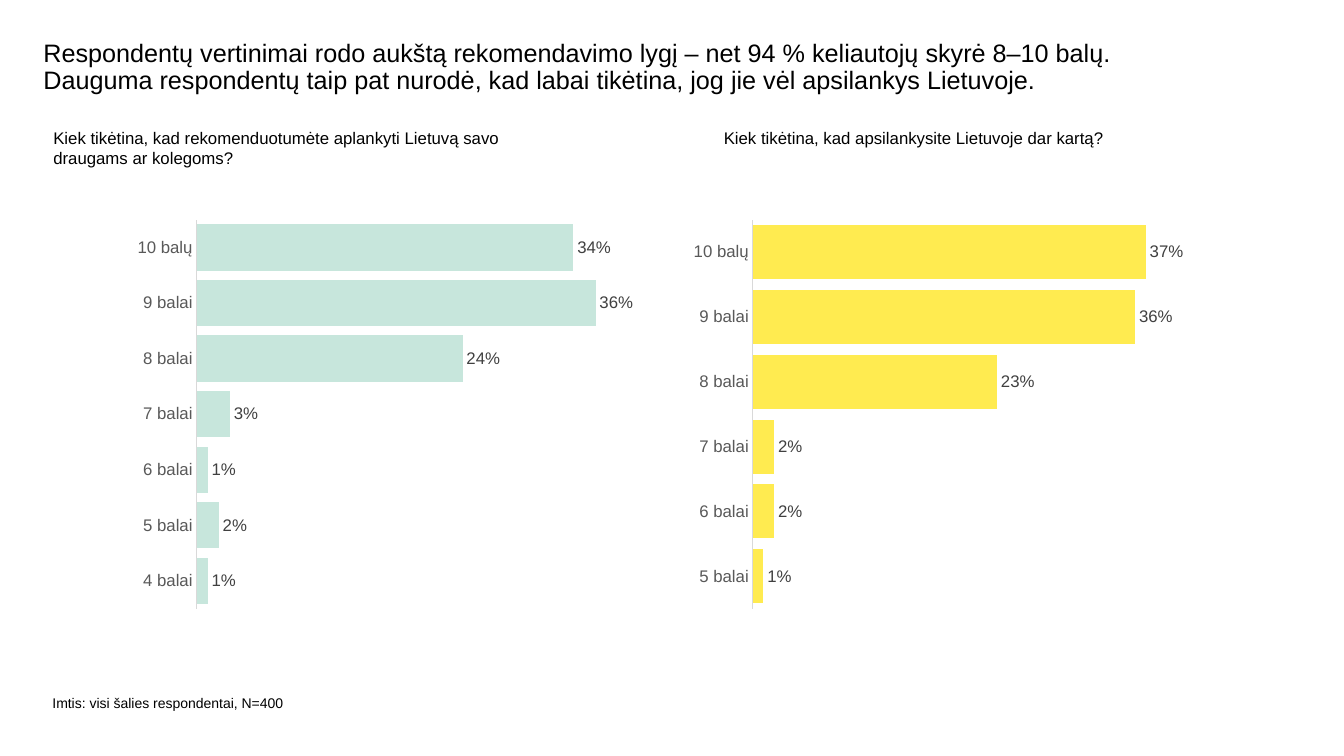
from pptx import Presentation
from pptx.chart.data import CategoryChartData
from pptx.dml.color import RGBColor
from pptx.enum import chart as charts, text
from pptx.util import Inches, Pt

BLACK = RGBColor(0x00, 0x00, 0x00)
AXIS_TEXT = RGBColor(0x59, 0x59, 0x59)
LABEL_TEXT = RGBColor(0x40, 0x40, 0x40)
AXIS_LINE = RGBColor(0xD9, 0xD9, 0xD9)
MINT = RGBColor(0xC7, 0xE6, 0xDC)
YELLOW = RGBColor(0xFF, 0xEB, 0x50)


def style_font(font, size, color):
    font.name, font.size, font.color.rgb = "Arial", Pt(size), color


deck = Presentation()
deck.slide_width, deck.slide_height = Inches(13.33), Inches(7.5)
page = deck.slides.add_slide(deck.slide_layouts[6])

NO_MARGINS = {f"margin_{side}": 0 for side in ("left", "top", "right", "bottom")}
GROW = {"auto_size": text.MSO_AUTO_SIZE.SHAPE_TO_FIT_TEXT}

# Title, sample note and the two questions
texts = [
    ("Respondentų vertinimai rodo aukštą rekomendavimo lygį – net 94 % keliautojų "
     "skyrė 8–10 balų. Dauguma respondentų taip pat nurodė, kad labai tikėtina, "
     "jog jie vėl apsilankys Lietuvoje.", (0.43, 0.4, 11.25, 0.6), 18, 0.9, NO_MARGINS),
    ("Imtis: visi šalies respondentai, N=400", (0.52, 6.89, 3.86, 0.44), 10, 1, NO_MARGINS),
    ("Kiek tikėtina, kad rekomenduotumėte aplankyti Lietuvą savo draugams ar kolegoms?",
     (0.43, 1.22, 5.19, 0.5), 12, 1, GROW),
    ("Kiek tikėtina, kad apsilankysite Lietuvoje dar kartą?",
     (7.08, 1.22, 6.25, 0.3), 12, 1, GROW),
]
for wording, place, size, spacing, frame_format in texts:
    frame = page.shapes.add_textbox(*map(Inches, place)).text_frame
    frame.word_wrap = True
    for name, value in frame_format.items():
        setattr(frame, name, value)
    para = frame.paragraphs[0]
    para.line_spacing = spacing
    span = para.add_run()
    span.text = wording
    style_font(span.font, size, BLACK)

# Score distribution charts
scores = ["10 balų"] + [f"{score} balai" for score in range(9, 3, -1)]
score_charts = [
    (1.26, 5.19, MINT, [0.34, 0.36, 0.24, 0.03, 0.01, 0.02, 0.01]),
    (6.78, 5, YELLOW, [0.37, 0.36, 0.23, 0.02, 0.02, 0.01]),
]
for left, width, color, shares in score_charts:
    data = CategoryChartData(number_format="0%")
    data.categories = scores[:len(shares)]
    data.add_series("Series 1", shares)
    chart = page.shapes.add_chart(
        charts.XL_CHART_TYPE.BAR_CLUSTERED, Inches(left), Inches(2.1),
        Inches(width), Inches(4.02), data).chart
    chart.has_legend = chart.has_title = False
    style_font(chart.font, 10, BLACK)

    score_axis = chart.category_axis
    score_axis.reverse_order = True
    score_axis.has_major_gridlines = False
    score_axis.major_tick_mark = charts.XL_TICK_MARK.NONE
    score_axis.format.line.color.rgb = AXIS_LINE
    score_axis.format.line.width = Pt(0.75)
    style_font(score_axis.tick_labels.font, 12, AXIS_TEXT)

    share_axis = chart.value_axis
    share_axis.visible = False
    share_axis.has_major_gridlines = False
    share_axis.minimum_scale, share_axis.maximum_scale = 0, 0.4

    plot = chart.plots[0]
    plot.gap_width = 20
    plot.vary_by_categories = False
    series = plot.series[0]
    series.format.fill.solid()
    series.format.fill.fore_color.rgb = color
    labels = series.data_labels
    labels.show_value = True
    labels.number_format, labels.number_format_is_linked = "0%", False
    labels.position = charts.XL_LABEL_POSITION.OUTSIDE_END
    style_font(labels.font, 12, LABEL_TEXT)

deck.save("out.pptx")
